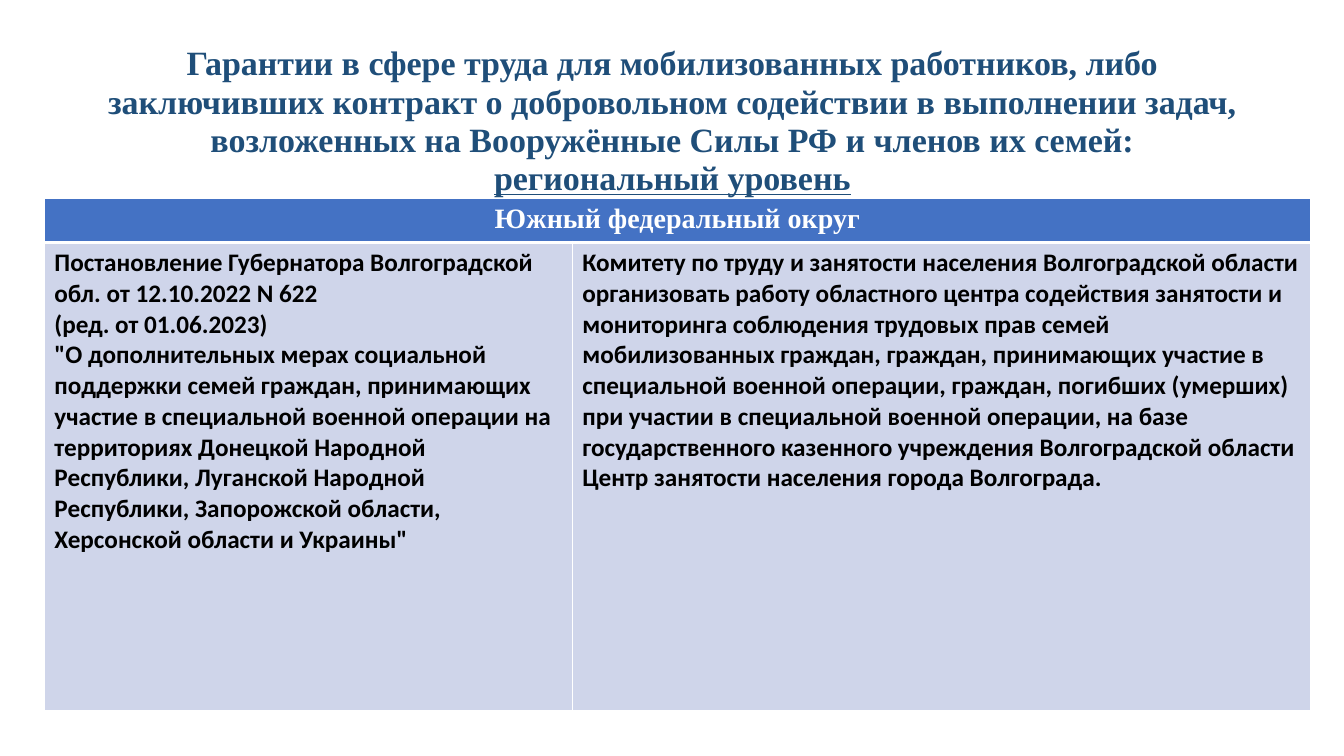
from dataclasses import dataclass

from lxml.etree import SubElement
from pptx import Presentation
from pptx.dml.color import RGBColor as Rgb
from pptx.enum.text import MSO_ANCHOR as Anchor, PP_ALIGN as Align
from pptx.oxml.ns import qn
from pptx.util import Inches, Pt


@dataclass(frozen=True)
class Theme:
    heading_font: str = "Times New Roman"
    body_font: str = "Calibri"
    title_size: float = 24.3
    district_size: float = 20
    body_size: float = 18
    title_color: str = "1F4E79"
    district_fill: str = "4472C4"
    body_fill: str = "CFD5EA"
    light: str = "FFFFFF"
    dark: str = "000000"


THEME = Theme()
WIDTH, HEIGHT = Inches(13.333), Inches(7.5)
TITLE_BOX = (0.069, 0.053, 0.8625, 0.193)
TABLE_BOX = (0.033, 0.263, 0.942, 0.677)
COLUMN_SHARES = (0.417, 0.583)
ROW_SHARES = (0.085, 0.915)

TITLE = (
    "Гарантии в сфере труда для мобилизованных работников, либо заключивших "
    "контракт о добровольном содействии в выполнении задач, возложенных на "
    "Вооружённые Силы РФ и членов их семей: "
)
LEVEL = "региональный уровень"
DISTRICT = "Южный федеральный округ"
DECREE = (
    "Постановление Губернатора Волгоградской обл. от 12.10.2022 N 622\n"
    "(ред. от 01.06.2023)\n"
    "\"О дополнительных мерах социальной поддержки семей граждан, принимающих "
    "участие в специальной военной операции на территориях Донецкой Народной "
    "Республики, Луганской Народной Республики, Запорожской области, "
    "Херсонской области и Украины\""
)
MEASURE = (
    "Комитету по труду и занятости населения Волгоградской области организовать "
    "работу областного центра содействия занятости и мониторинга соблюдения "
    "трудовых прав семей мобилизованных граждан, граждан, принимающих участие в "
    "специальной военной операции, граждан, погибших (умерших) при участии в "
    "специальной военной операции, на базе государственного казенного учреждения "
    "Волгоградской области Центр занятости населения города Волгограда."
)


def place(shares):
    left, top, width, height = shares
    return int(left * WIDTH), int(top * HEIGHT), int(width * WIDTH), int(height * HEIGHT)


def style_text(frame, family, size, color, align):
    for paragraph in frame.paragraphs:
        paragraph.alignment = align
        for run in paragraph.runs:
            run.font.name = family
            run.font.size = Pt(size)
            run.font.bold = True
            run.font.color.rgb = Rgb.from_string(color)


def add_borders(cell, bottom_width):
    properties = cell._tc.get_or_add_tcPr()
    widths = {"a:lnL": 1, "a:lnR": 1, "a:lnT": 1, "a:lnB": bottom_width}
    for position, (side, width) in enumerate(widths.items()):
        line = SubElement(properties, qn(side), w=str(Pt(width)))
        fill = SubElement(line, qn("a:solidFill"))
        SubElement(fill, qn("a:srgbClr"), val=THEME.light)
        properties.insert(position, line)


def fill_cell(cell, text, fill, style, bottom_width=1):
    cell.text_frame.text = text
    style_text(cell.text_frame, *style)
    cell.fill.solid()
    cell.fill.fore_color.rgb = Rgb.from_string(fill)
    add_borders(cell, bottom_width)


def add_title(slide, box):
    frame = slide.shapes.add_textbox(*box).text_frame
    frame.word_wrap = True
    frame.vertical_anchor = Anchor.TOP
    heading = frame.paragraphs[0]
    heading.text = TITLE
    heading.line_spacing = 0.94
    level = heading.add_run()
    level.text = LEVEL
    level.font.underline = True
    style_text(frame, THEME.heading_font, THEME.title_size, THEME.title_color, Align.CENTER)


def add_guarantees(slide, box):
    width, height = box[2:]
    table = slide.shapes.add_table(len(ROW_SHARES), len(COLUMN_SHARES), *box).table
    for column, share in zip(table.columns, COLUMN_SHARES):
        column.width = int(width * share)
    for row, share in zip(table.rows, ROW_SHARES):
        row.height = int(height * share)

    table.cell(0, 0).merge(table.cell(0, 1))
    district_style = (THEME.heading_font, THEME.district_size, THEME.light, Align.CENTER)
    for column, text in enumerate((DISTRICT, "")):
        fill_cell(table.cell(0, column), text, THEME.district_fill, district_style, 3)

    body_style = (THEME.body_font, THEME.body_size, THEME.dark, Align.LEFT)
    for column, text in enumerate((DECREE, MEASURE)):
        fill_cell(table.cell(1, column), text, THEME.body_fill, body_style)
        top_line = table.cell(1, column)._tc.tcPr.find(qn("a:lnT"))
        top_line.set("w", str(Pt(3)))


def main():
    deck = Presentation()
    deck.slide_width, deck.slide_height = WIDTH, HEIGHT
    slide = deck.slides.add_slide(deck.slide_layouts[6])
    add_title(slide, place(TITLE_BOX))
    add_guarantees(slide, place(TABLE_BOX))
    deck.save("out.pptx")


if __name__ == "__main__":
    main()
